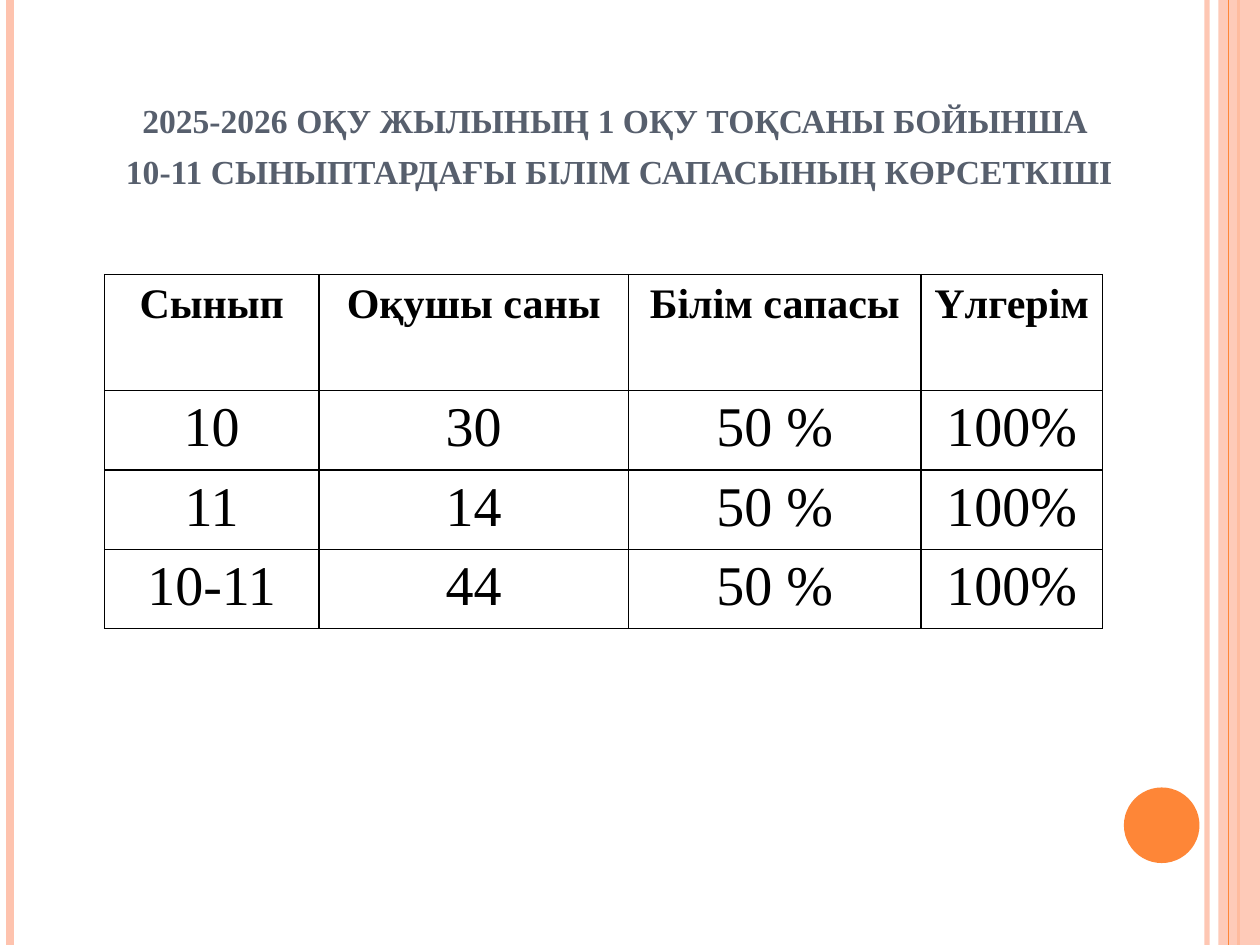
from lxml import etree
from pptx import Presentation
from pptx.dml.color import RGBColor
from pptx.enum.shapes import MSO_CONNECTOR, MSO_SHAPE
from pptx.enum.text import MSO_ANCHOR, PP_ALIGN
from pptx.oxml.ns import qn
from pptx.util import Inches, Pt

FONT = "Times New Roman"
PALE, ORANGE, SLATE, BLACK = "FEC3AE", "FE8637", "575F6D", "000000"
WIDTH, HEIGHT = 10, 7.5

TITLE = ["2025-2026 оқу жылының 1 оқу тоқсаны бойынша ",
         "10-11 сыныптардағы білім сапасының көрсеткіші"]
COLUMN_WIDTHS = [1.7, 2.46, 2.32, 1.44]
ROW_HEIGHTS = [0.92, 0.63, 0.63, 0.63]
RESULTS = [
    ["Сынып", "Оқушы саны", "Білім сапасы", "Үлгерім"],
    ["10", "30", "50 %", "100%"],
    ["11", "14", "50 %", "100%"],
    ["10-11", "44", "50 %", "100%"],
]


def color(value):
    return RGBColor.from_string(value)


def set_alpha(fill, percent):
    """Make a solid fill or line fill partly transparent."""
    tint = fill._xPr.find(".//" + qn("a:srgbClr"))
    etree.SubElement(tint, qn("a:alpha"), val=str(percent * 1000))


def write(frame, lines, size=24, ink=BLACK, bold=False, small_caps=False):
    for index, line in enumerate(lines):
        para = frame.paragraphs[0] if index == 0 else frame.add_paragraph()
        para.alignment = PP_ALIGN.CENTER
        span = para.add_run()
        span.text = line
        span.font.name = FONT
        span.font.size = Pt(size)
        span.font.bold = bold
        span.font.color.rgb = color(ink)
        if small_caps:
            span.font._element.set("cap", "small")


def add_stripe(page, x, ink, weight, alpha=None):
    """Draw a vertical line over the full height of the page."""
    stripe = page.shapes.add_connector(
        MSO_CONNECTOR.STRAIGHT, Inches(x), 0, Inches(x), Inches(HEIGHT))
    stripe.line.color.rgb = color(ink)
    stripe.line.width = Pt(weight)
    if alpha:
        set_alpha(stripe.line.fill, alpha)
    etree.SubElement(stripe._element.spPr, qn("a:effectLst"))


def add_solid(page, kind, left, top, width, height, ink, alpha=None):
    """Draw a filled shape without an outline."""
    shape = page.shapes.add_shape(
        kind, Inches(left), Inches(top), Inches(width), Inches(height))
    shape.shadow.inherit = False
    shape.fill.solid()
    shape.fill.fore_color.rgb = color(ink)
    shape.line.fill.background()
    if alpha:
        set_alpha(shape.fill, alpha)


def add_decoration(page):
    add_stripe(page, 9.58, PALE, 3, alpha=93)
    add_stripe(page, 0.08, PALE, 4.5)
    add_stripe(page, 9.83, ORANGE, 1.5)
    add_solid(page, MSO_SHAPE.RECTANGLE, 9.67, 0, 0.33, HEIGHT, PALE, alpha=87)
    add_stripe(page, 9.75, ORANGE, 0.75)
    add_solid(page, MSO_SHAPE.OVAL, 8.92, 6.25, 0.6, 0.6, ORANGE)


def place_title(page, left, top, width, height):
    title = page.shapes.title
    title.left, title.top = Inches(left), Inches(top)
    title.width, title.height = Inches(width), Inches(height)
    frame = title.text_frame
    frame.word_wrap = True
    frame.vertical_anchor = MSO_ANCHOR.BOTTOM
    write(frame, TITLE, ink=SLATE, bold=True, small_caps=True)


def add_borders(cell, weight=1):
    properties = cell._tc.get_or_add_tcPr()
    for index, side in enumerate(("lnL", "lnR", "lnT", "lnB")):
        border = etree.Element(qn("a:" + side), w=str(Pt(weight)))
        fill = etree.SubElement(border, qn("a:solidFill"))
        etree.SubElement(fill, qn("a:srgbClr"), val=BLACK)
        properties.insert(index, border)


def add_results(page, left, top):
    frame = page.shapes.add_table(
        len(ROW_HEIGHTS), len(COLUMN_WIDTHS), Inches(left), Inches(top),
        Inches(sum(COLUMN_WIDTHS)), Inches(sum(ROW_HEIGHTS)))
    table = frame.table
    for column, width in zip(table.columns, COLUMN_WIDTHS):
        column.width = Inches(width)
    for row_index, (row, height) in enumerate(zip(table.rows, ROW_HEIGHTS)):
        row.height = Inches(height)
        header = row_index == 0
        for cell, text in zip(row.cells, RESULTS[row_index]):
            cell.fill.background()
            cell.margin_left = cell.margin_right = Inches(0.08)
            write(cell.text_frame, [text], size=24 if header else 32, bold=header)
            add_borders(cell)


def main():
    deck = Presentation()
    deck.slide_width, deck.slide_height = Inches(WIDTH), Inches(HEIGHT)
    page = deck.slides.add_slide(deck.slide_layouts.get_by_name("Title Only"))
    add_decoration(page)
    place_title(page, 0.83, 0.27, 8.17, 1.31)
    add_results(page, 0.83, 2.18)
    deck.save("out.pptx")


if __name__ == "__main__":
    main()
